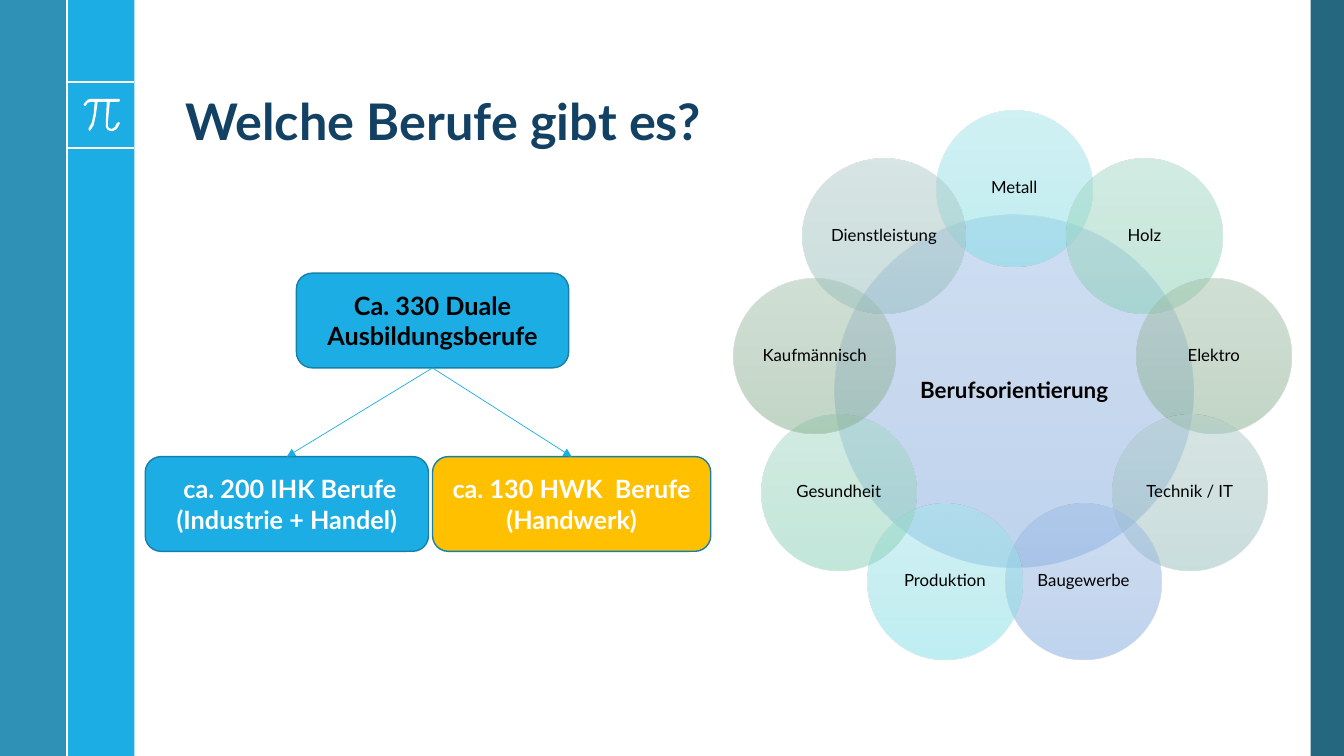
"""Build the slide about apprenticeship occupations with a ring of vocational fields."""
import math

from lxml import etree
from pptx import Presentation
from pptx.dml.color import RGBColor
from pptx.enum.shapes import MSO_CONNECTOR, MSO_SHAPE
from pptx.enum.text import MSO_ANCHOR, PP_ALIGN
from pptx.oxml.ns import qn
from pptx.util import Inches, Pt

STRAIGHT = MSO_CONNECTOR.STRAIGHT
RECTANGLE, ROUNDED, OVAL = MSO_SHAPE.RECTANGLE, MSO_SHAPE.ROUNDED_RECTANGLE, MSO_SHAPE.OVAL
LEFT, CENTER = PP_ALIGN.LEFT, PP_ALIGN.CENTER
MIDDLE, BOTTOM = MSO_ANCHOR.MIDDLE, MSO_ANCHOR.BOTTOM
COLORS = {
    "white": "FFFFFF", "black": "000000", "title": "134163", "sky": "1CADE4",
    "teal": "1482AC", "deep": "0E5772", "border": "1580A9", "amber": "FFC000",
}
GRADIENTS = {
    "blue": ("9FBEE8", "92B4E0", "7EA9E0"),
    "cyan": ("A2E5EB", "94E0E6", "7FE0E7"),
    "mint": ("A7DAC8", "99D4BE", "86D1B6"),
    "sage": ("A4C2AA", "97B79E", "84AE8D"),
    "mist": ("B1CDCB", "A5C5C3", "95BEBC"),
}
WIDTH, HEIGHT = 13.33, 7.5
BAND = WIDTH / 20


def write(text_frame, text, size, color, bold=True, align=CENTER, anchor=MIDDLE, spacing=None):
    text_frame.text = text
    text_frame.word_wrap = True
    text_frame.vertical_anchor = anchor
    for paragraph in text_frame.paragraphs:
        paragraph.alignment = align
        paragraph.line_spacing = spacing
        for run in paragraph.runs:
            run.font.name = "Lato"
            run.font.size = Pt(size)
            run.font.bold = bold
            run.font.color.rgb = RGBColor.from_string(COLORS[color])


def add_line(start, end, color, width):
    line = slide.shapes.add_connector(STRAIGHT, *[Inches(value) for value in (*start, *end)])
    line.line.color.rgb = RGBColor.from_string(COLORS[color])
    line.line.width = Pt(width)
    etree.SubElement(line._element.spPr, qn("a:effectLst"))
    return line


presentation = Presentation()
presentation.slide_width, presentation.slide_height = Inches(WIDTH), Inches(HEIGHT)
slide = presentation.slides.add_slide(presentation.slide_layouts[5])

for left, width, color, opacity in [
    (13, 0.33, "deep", 90), (BAND, BAND, "sky", 100), (0, BAND, "teal", 88),
]:
    band = slide.shapes.add_shape(RECTANGLE, Inches(left), 0, Inches(width), Inches(HEIGHT))
    band.shadow.inherit = False
    band.line.fill.background()
    band.fill.solid()
    band.fill.fore_color.rgb = RGBColor.from_string(COLORS[color])
    fill_color = band._element.spPr.find(qn("a:solidFill"))[0]
    etree.SubElement(fill_color, qn("a:alpha")).set("val", str(opacity * 1000))

for y in (0.81, 1.47):
    add_line((BAND, y), (2 * BAND, y), "white", 1.5)

pi_outline = [
    (118, 98), (90, 98), (87, 99), (84, 102), (83, 104), (84, 105), (85, 105),
    (87, 102), (90, 101), (94, 101), (93, 113), (91, 122), (88, 127), (88, 129),
    (89, 129.5), (90, 129), (93, 124), (95, 115), (97, 101), (106, 101), (105, 122),
    (105, 126), (107, 129), (110, 130), (112, 130), (116, 128), (119, 122), (118, 121),
    (116, 122), (114, 126), (111, 128), (108, 127), (107, 125), (107, 122), (109, 101),
    (118, 101), (119, 100), (119, 99),
]
builder = slide.shapes.build_freeform(*pi_outline[0], scale=Inches(0.01))
builder.add_line_segments(pi_outline[1:])
pi_sign = builder.convert_to_shape()
pi_sign.shadow.inherit = False
pi_sign.fill.solid()
pi_sign.fill.fore_color.rgb = RGBColor.from_string(COLORS["white"])
pi_sign.line.fill.background()
add_line((BAND, 0), (BAND, HEIGHT), "white", 1.5)

title = slide.shapes.title
title.left, title.top, title.width, title.height = [Inches(v) for v in (1.74, 0.19, 10.7, 1.36)]
write(title.text_frame, "Welche Berufe gibt es?", 36, "title", True, LEFT, BOTTOM, 0.9)

hub_x, hub_y, ring_radius, petal = 10.06, 3.88, 2.01, 1.54
fields = [
    ("Metall", "cyan", petal), ("Holz", "mint", petal), ("Elektro", "sage", petal),
    ("Technik / IT", "mist", petal), ("Baugewerbe", "blue", petal),
    ("Produktion", "cyan", petal), ("Gesundheit", "mint", petal),
    ("Kaufmännisch", "sage", 1.6), ("Dienstleistung", "mist", 1.61),
]
circles = [("Berufsorientierung", "blue", hub_x, hub_y, 3.56, 3.5, 16, True)]
for index, (name, gradient, width) in enumerate(fields):
    angle = math.tau * index / len(fields)
    x = hub_x + ring_radius * math.sin(angle)
    y = hub_y - ring_radius * math.cos(angle)
    circles.append((name, gradient, x, y, width, petal, 12, False))

for name, gradient, x, y, width, height, size, bold in circles:
    circle = slide.shapes.add_shape(
        OVAL, Inches(x - width / 2), Inches(y - height / 2), Inches(width), Inches(height))
    circle.shadow.inherit = False
    circle.line.fill.background()
    circle.fill.gradient()
    circle.fill.gradient_angle = 270
    stops = circle._element.spPr.find(qn("a:gradFill")).find(qn("a:gsLst"))
    stops[:] = []
    for position, color in zip((0, 50, 100), GRADIENTS[gradient]):
        stop = etree.SubElement(stops, qn("a:gs"), pos=str(position * 1000))
        stop_color = etree.SubElement(stop, qn("a:srgbClr"), val=color)
        etree.SubElement(stop_color, qn("a:alpha"), val="50000")
    frame = circle.text_frame
    frame.margin_left = frame.margin_right = frame.margin_top = frame.margin_bottom = Inches(0.02)
    write(frame, name, size, "black", bold, spacing=0.9)

boxes = []
for text, left, top, width, fill, color in [
    (" ca. 200 IHK Berufe\n(Industrie + Handel)", 1.44, 4.53, 2.81, "sky", "white"),
    ("ca. 130 HWK  Berufe\n(Handwerk)", 4.29, 4.53, 2.76, "amber", "white"),
    ("Ca. 330 Duale Ausbildungsberufe", 2.94, 2.71, 2.7, "sky", "black"),
]:
    box = slide.shapes.add_shape(
        ROUNDED, Inches(left), Inches(top), Inches(width), Inches(0.94))
    box.shadow.inherit = False
    box.fill.solid()
    box.fill.fore_color.rgb = RGBColor.from_string(COLORS[fill])
    box.line.color.rgb = RGBColor.from_string(COLORS["border"])
    box.line.width = Pt(1)
    write(box.text_frame, text, 18, color)
    boxes.append(box)

*branches, total = boxes
for branch in branches:
    arrow = add_line((0, 0), (1, 1), "sky", 0.5)
    arrow.begin_connect(total, 2)
    arrow.end_connect(branch, 0)
    etree.SubElement(arrow.line._get_or_add_ln(), qn("a:tailEnd"), type="triangle")

presentation.save("out.pptx")
